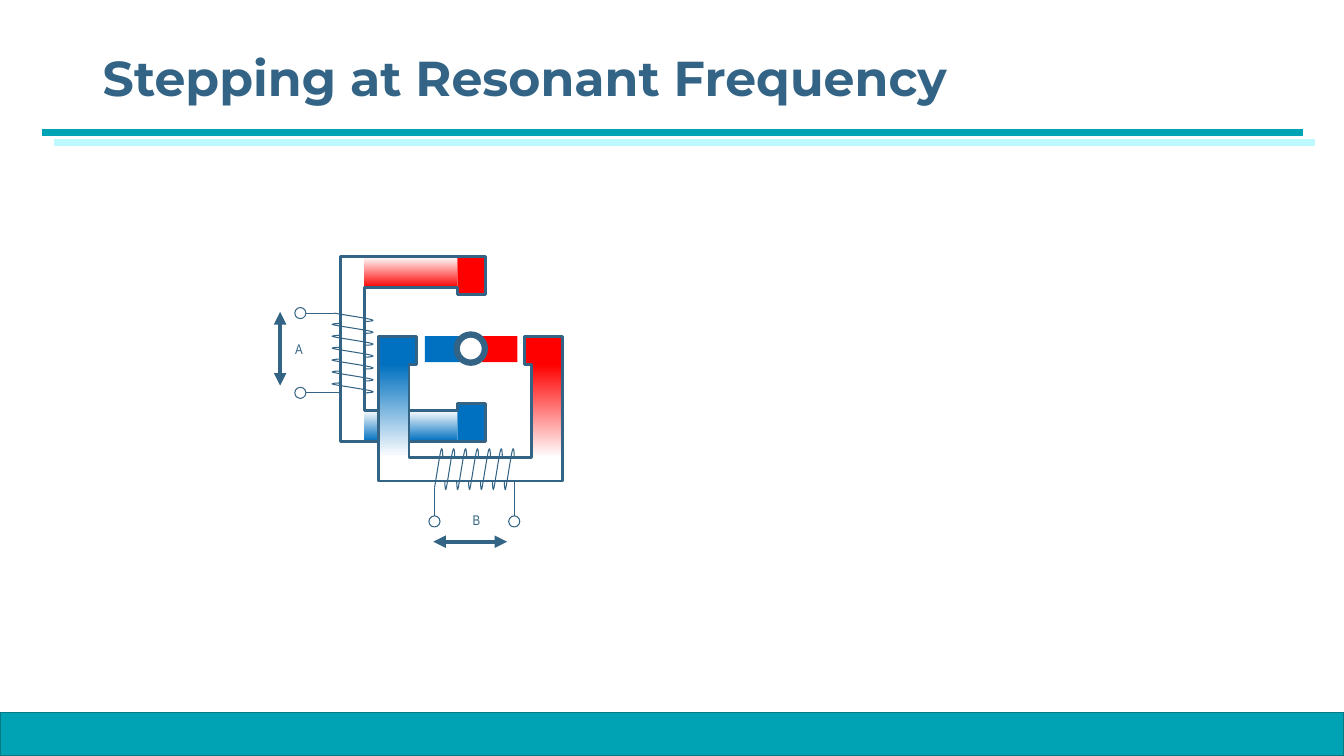
from pptx import Presentation
from pptx.dml.color import RGBColor
from pptx.enum.shapes import MSO_CONNECTOR, MSO_SHAPE
from pptx.enum.text import MSO_ANCHOR
from pptx.oxml.ns import qn
from pptx.util import Cm, Pt
from lxml.etree import SubElement

COLORS = {"ink": "346485", "teal": "00A3B3", "dark_teal": "007984", "pale_teal": "BDF9FF",
          "red": "FF0000", "blue": "0070C0", "white": "FFFFFF"}

# Phase geometry in cm: u runs across the poles, v from the poles to the coil.
SPAN, LIMB, POLE, POLE_DEPTH, YOKE, DEPTH = 4.65, 0.78, 0.96, 0.71, 3.06, 3.65
FRAME_HALF = [(0, 0), (POLE, 0), (POLE, POLE_DEPTH), (LIMB, POLE_DEPTH), (LIMB, YOKE)]
COIL_FIRST, COIL_LAST, TURNS, PITCH = 1.42, 3.43, 7, 0.3
TURN = [(0, 3.04), (0, 2.89), (-0.02, 2.76), (-0.05, 2.89), (-0.08, 3), (-0.18, 3.67),
        (-0.21, 3.82), (-0.23, 3.95), (-0.25, 3.8), (-0.25, 3.65)]


def rgb(name):
    return RGBColor.from_string(COLORS[name])


def bend(sp):
    """Turn every three line segments of a freeform into one cubic curve."""
    segments = list(sp._element.iter(qn("a:lnTo")))
    outline = segments[0].getparent()
    for i in range(0, len(segments), 3):
        curve = SubElement(outline, qn("a:cubicBezTo"))
        for segment in segments[i:i + 3]:
            curve.append(segment[0])
            outline.remove(segment)


class Deck:
    def __init__(self, slide):
        self.s = slide

    def style(self, sp, fill=None, line=None, width=0.75):
        sp.shadow.inherit = False
        if fill:
            sp.fill.solid()
            sp.fill.fore_color.rgb = rgb(fill)
        else:
            sp.fill.background()
        if line:
            sp.line.color.rgb = rgb(line)
            sp.line.width = Pt(width)
        else:
            sp.line.fill.background()

    def shape(self, x, y, w, h, kind=MSO_SHAPE.RECTANGLE, **look):
        sp = self.s.shapes.add_shape(kind, Cm(x), Cm(y), Cm(w), Cm(h))
        self.style(sp, **look)
        return sp

    def fade(self, x, y, w, h, color, angle):
        """Add a rectangle that fades from a colour to white."""
        fill = self.shape(x, y, w, h).fill
        fill.gradient()
        fill.gradient_angle = angle
        for stop, name in zip(fill.gradient_stops, (color, "white")):
            stop.color.rgb = rgb(name)

    def outline(self, points, closed, width):
        pts = [(Cm(x), Cm(y)) for x, y in points]
        builder = self.s.shapes.build_freeform(*pts[0])
        builder.add_line_segments(pts[1:], close=closed)
        sp = builder.convert_to_shape()
        self.style(sp, line="ink", width=width)
        return sp

    def line(self, start, end, color="ink", width=0.75, arrow=False, shadow=None):
        c = self.s.shapes.add_connector(MSO_CONNECTOR.STRAIGHT, *map(Cm, start + end))
        c.line.color.rgb = rgb(color)
        c.line.width = Pt(width)
        if arrow:
            SubElement(c.line._ln, qn("a:headEnd"), type="triangle")
        effects = SubElement(c._element.spPr, qn("a:effectLst"))
        if shadow:
            outer = SubElement(effects, qn("a:outerShdw"), blurRad="0", dist=str(Pt(11)),
                               dir=str(40 * 60000), algn="tl", rotWithShape="0")
            SubElement(outer, qn("a:srgbClr"), val=COLORS[shadow])

    def text(self, x, y, w, h, text, font, size, bold=False, inset=None):
        tf = self.s.shapes.add_textbox(Cm(x), Cm(y), Cm(w), Cm(h)).text_frame
        tf.word_wrap = inset is None
        tf.vertical_anchor = MSO_ANCHOR.MIDDLE if inset is None else MSO_ANCHOR.TOP
        if inset is not None:
            tf.margin_left = tf.margin_right = tf.margin_top = tf.margin_bottom = Cm(inset)
        p = tf.paragraphs[0]
        p.text = text
        p.line_spacing = 0.9 if inset is None else 1.0
        p.font.name, p.font.size, p.font.bold = font, Pt(size), bold
        p.font.color.rgb = rgb("ink")

    def phase(self, place, colors, angle):
        """Draw a stator magnet with its coil; place maps (u, v) to the slide."""
        def box(u, v, du, dv):
            (x1, y1), (x2, y2) = place(u, v), place(u + du, v + dv)
            return min(x1, x2), min(y1, y2), abs(x2 - x1), abs(y2 - y1)

        for color, far in zip(colors, (0, 1)):
            self.fade(*box(far * (SPAN - LIMB), POLE_DEPTH, LIMB, YOKE - POLE_DEPTH),
                      color, angle)
            self.shape(*box(far * (SPAN - POLE), 0, POLE, POLE_DEPTH), fill=color)
        frame = FRAME_HALF + [(SPAN - u, v) for u, v in reversed(FRAME_HALF)]
        frame += [(SPAN, DEPTH), (0, DEPTH)]
        self.outline([place(u, v) for u, v in frame], True, 2)

        for i in range(TURNS):
            turn = TURN if i < TURNS - 1 else TURN[:7]
            bend(self.outline([place(COIL_LAST - i * PITCH + u, v) for u, v in turn],
                              False, 0.75))
        for u, v in ((COIL_FIRST, 3.82), (COIL_LAST, 3.65)):
            self.line(place(u, v), place(u, 4.52))
            self.shape(*box(u - 0.14, 4.53, 0.28, 0.28), kind=MSO_SHAPE.OVAL, line="ink")
        for tip, tail in ((1.39, 2.94), (3.25, 1.7)):
            self.line(place(tip, 5.18), place(tail, 5.18), width=3, arrow=True)

    def rotor(self):
        self.shape(12.15, 8.47, 0.89, 0.66, fill="red")
        self.shape(10.71, 8.47, 0.89, 0.66, fill="blue")
        self.shape(11.51, 8.43, 0.71, 0.71, kind=MSO_SHAPE.OVAL,
                   fill="white", line="ink", width=4.5)


def main():
    prs = Presentation()
    prs.slide_width, prs.slide_height = Cm(33.87), Cm(19.05)
    deck = Deck(prs.slides.add_slide(prs.slide_layouts[6]))

    deck.shape(0, 17.96, 33.87, 1.09, fill="teal", line="dark_teal", width=1)
    deck.line((1.07, 3.33), (32.84, 3.33), "teal", 5, shadow="pale_teal")
    deck.text(2.34, 1, 29.21, 2.06, "Stepping at Resonant Frequency",
              "Montserrat", 35, bold=True)

    deck.phase(lambda u, v: (12.24 - v, 6.47 + u), ("red", "blue"), 90)
    deck.phase(lambda u, v: (9.53 + u, 8.47 + v), ("blue", "red"), 270)
    deck.rotor()
    for label, x, y in (("A", 7.31, 8.46), ("B", 11.78, 12.75)):
        deck.text(x, y, 0.46, 0.69, label, "Arial Narrow", 10, inset=0.13)

    prs.save("out.pptx")


if __name__ == "__main__":
    main()
